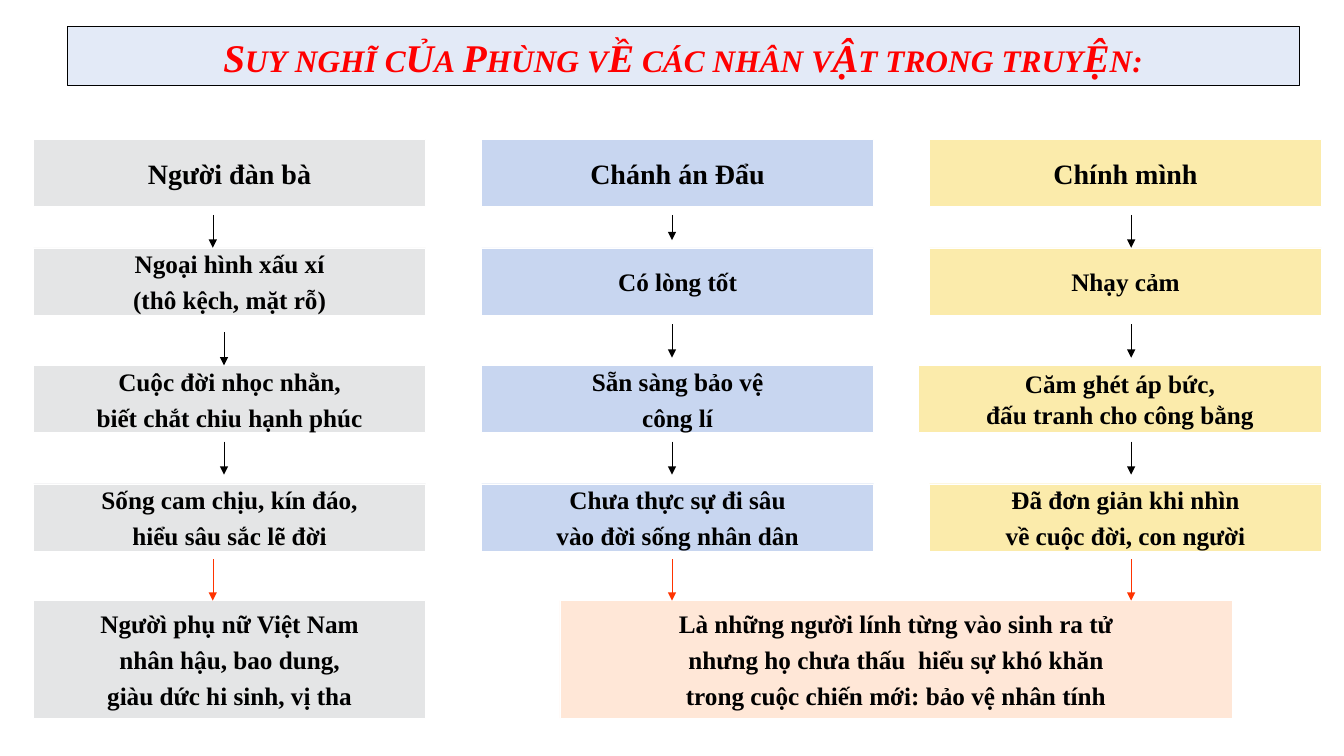
from dataclasses import dataclass

from lxml.etree import SubElement as sub
from pptx import Presentation
from pptx.dml.color import RGBColor as RGB
from pptx.enum.shapes import MSO_CONNECTOR as LINK, MSO_SHAPE as SHAPE
from pptx.enum.text import MSO_ANCHOR as ANCHOR, PP_ALIGN as ALIGN
from pptx.oxml.ns import qn
from pptx.util import Pt


@dataclass(frozen=True)
class Theme:
    face: str = "Times New Roman"
    title: float = 28
    head: float = 20
    text: float = 18
    gap: float = 4.2
    rule: float = 0.25
    black: str = "000000"
    white: str = "FFFFFF"
    red: str = "FF0000"
    flame: str = "FF3300"
    band: str = "E3EAF7"
    gray: str = "E4E5E6"
    blue: str = "C8D6F0"
    gold: str = "FBEBAB"
    peach: str = "FFE7D7"


@dataclass(frozen=True)
class Box:
    left: float
    top: float
    width: float
    height: float
    fill: str
    lines: tuple[str, ...]
    size: float
    gap: float = 4.2


@dataclass(frozen=True)
class Arrow:
    x: float
    top: float
    end: float
    color: str


@dataclass(frozen=True)
class Column:
    fill: str
    cells: tuple[tuple[str, ...], ...]
    arrows: tuple[tuple[float, float, float], ...]  # x, top, end


THEME = Theme()
LEFT, STEP, WIDTH, HEIGHT = 24, 320, 280, 48
TOPS = (99.5, 177, 261, 345.5)
LAST, TALL = 429, 84

COLUMNS = (
    Column(
        THEME.gray,
        (
            ("Người đàn bà",),
            ("Ngoại hình xấu xí", "(thô kệch, mặt rỗ)"),
            ("Cuộc đời nhọc nhằn,", "biết chắt chiu hạnh phúc"),
            ("Sống cam chịu, kín đáo,", "hiểu sâu sắc lẽ đời"),
        ),
        ((152, 153.5, 177), (160, 237.5, 261), (160, 315.5, 339), (152, 399.5, LAST)),
    ),
    Column(
        THEME.blue,
        (
            ("Chánh án Đẩu",),
            ("Có lòng tốt",),
            ("Sẵn sàng bảo vệ", "công lí"),
            ("Chưa thực sự đi sâu", "vào đời sống nhân dân"),
        ),
        ((480, 153.5, 171.5), (480, 231.5, 255.5), (480, 315.5, 339), (480, 399.5, LAST)),
    ),
    Column(
        THEME.gold,
        (
            ("Chính mình",),
            ("Nhạy cảm",),
            ("Căm ghét áp bức,", "đấu tranh cho công bằng"),
            ("Đã đơn giản khi nhìn", "về cuộc đời, con người"),
        ),
        ((808, 153.5, 177), (808, 231.5, 255.5), (808, 315.5, 339), (808, 399.5, LAST)),
    ),
)

ENDS = (
    Box(LEFT, LAST, WIDTH, TALL, THEME.gray,
        ("Ngườì phụ nữ Việt Nam", "nhân hậu, bao dung,", "giàu dức hi sinh, vị tha"),
        THEME.text),
    Box(400, LAST, 480, TALL, THEME.peach,
        ("Là những người lính từng vào sinh ra tử",
         "nhưng họ chưa thấu  hiểu sự khó khăn",
         "trong cuộc chiến mới: bảo vệ nhân tính"),
        THEME.text),
)


def style(run, size: float, color: str, **more) -> None:
    form = {"name": THEME.face, "size": Pt(size), "bold": True, **more}
    for key, value in form.items():
        setattr(run.font, key, value)
    run.font.color.rgb = RGB.from_string(color)


def paint(shape, fill: str, line: str) -> None:
    shape.fill.solid()
    shape.fill.fore_color.rgb = RGB.from_string(fill)
    shape.line.color.rgb = RGB.from_string(line)
    shape.line.width = Pt(THEME.rule)


def draw_title(slide, text: str) -> None:
    title = slide.shapes.title
    place = {"left": 48, "top": 19, "width": 880, "height": 42}
    for key, value in place.items():
        setattr(title, key, Pt(value))
    paint(title, THEME.band, THEME.black)
    title.text_frame.vertical_anchor = ANCHOR.BOTTOM
    par = title.text_frame.paragraphs[0]
    par.alignment = ALIGN.CENTER
    run = par.add_run()
    run.text = text
    style(run, THEME.title, THEME.red, italic=True)
    run.font._element.set("cap", "small")


def draw_box(slide, box: Box) -> None:
    place = (Pt(v) for v in (box.left, box.top, box.width, box.height))
    shape = slide.shapes.add_shape(SHAPE.RECTANGLE, *place)
    shape.shadow.inherit = False
    paint(shape, box.fill, THEME.white)
    frame = shape.text_frame
    frame.word_wrap = False
    frame.vertical_anchor = ANCHOR.MIDDLE
    for i, text in enumerate(box.lines):
        par = frame.add_paragraph() if i else frame.paragraphs[0]
        par.alignment = ALIGN.CENTER
        par.space_before = Pt(box.gap)
        run = par.add_run()
        run.text = text
        style(run, box.size, THEME.black)


def draw_arrow(slide, arrow: Arrow) -> None:
    ends = (Pt(v) for v in (arrow.x, arrow.top, arrow.x, arrow.end))
    link = slide.shapes.add_connector(LINK.STRAIGHT, *ends)
    link.line.color.rgb = RGB.from_string(arrow.color)
    link.line.width = Pt(THEME.rule)
    sub(link.line._get_or_add_ln(), qn("a:tailEnd"), type="triangle")
    sub(link._element.spPr, qn("a:effectLst"))


def main() -> None:
    deck = Presentation()
    deck.slide_width, deck.slide_height = Pt(960), Pt(540)
    slide = deck.slides.add_slide(deck.slide_layouts[5])
    draw_title(slide, "Suy nghĩ cỦa Phùng vỀ các nhân vẬt trong truyỆn:")

    # Columns of traits
    for i, col in enumerate(COLUMNS):
        for j, (top, lines) in enumerate(zip(TOPS, col.cells)):
            wide = 8 if (i, j) == (2, 2) else 0  # this box reaches further left
            size = THEME.text if j else THEME.head
            draw_box(slide, Box(LEFT + i * STEP - wide, top, WIDTH + wide, HEIGHT,
                                col.fill, lines, size, 0 if wide else THEME.gap))

    # Conclusions
    for box in ENDS:
        draw_box(slide, box)

    # Arrows, the last of each column in red
    for col in COLUMNS:
        for x, top, end in col.arrows:
            color = THEME.flame if end == LAST else THEME.black
            draw_arrow(slide, Arrow(x, top, end, color))

    deck.save("out.pptx")


if __name__ == "__main__":
    main()
